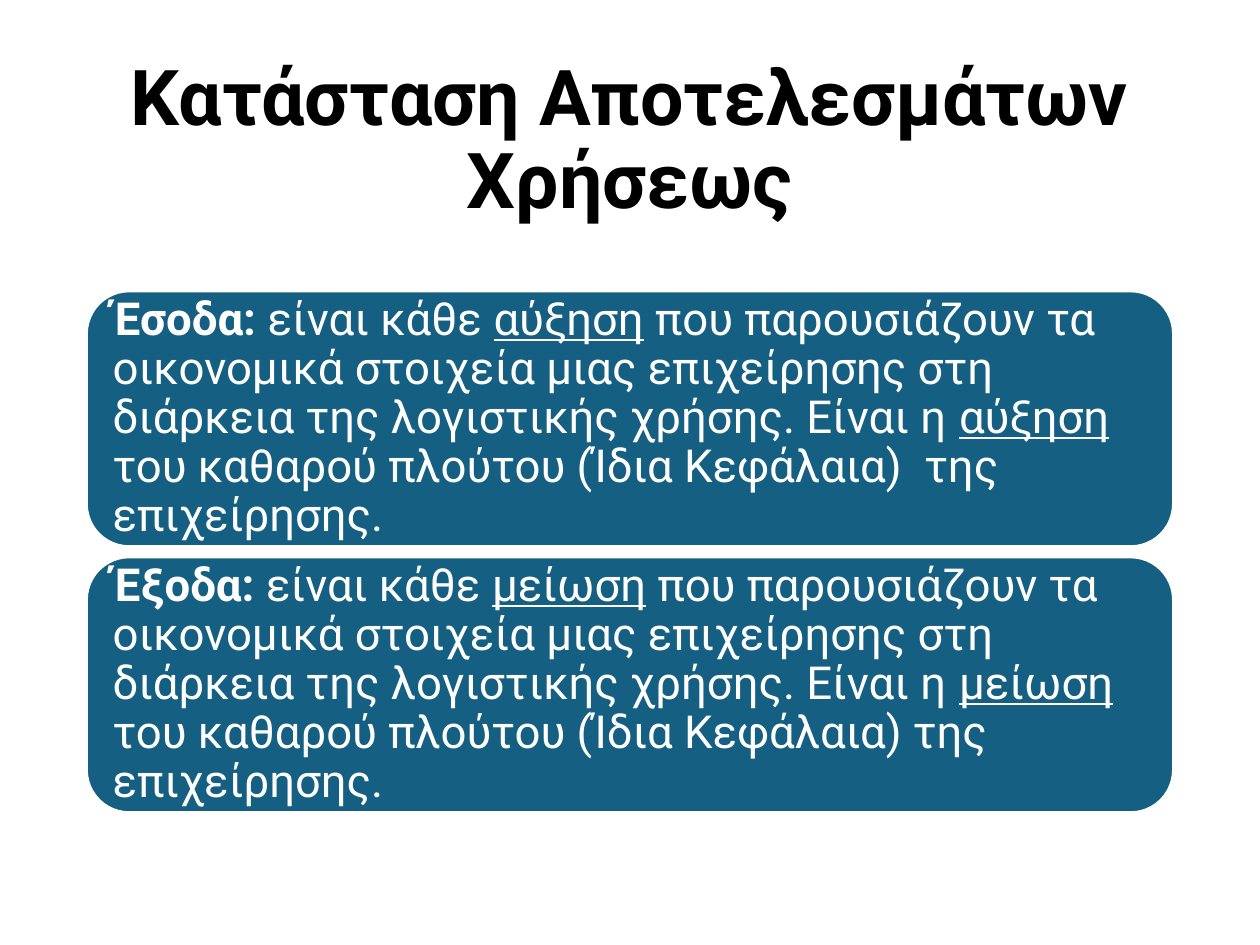
from dataclasses import dataclass

from pptx import Presentation
from pptx.dml.color import RGBColor
from pptx.enum.shapes import MSO_SHAPE as Shape
from pptx.enum.text import MSO_ANCHOR as Anchor, PP_ALIGN as Align
from pptx.slide import Slide
from pptx.text.text import TextFrame
from pptx.util import Pt


@dataclass(frozen=True)
class Theme:
    font: str = "Roboto"
    title_size: float = 44
    body_size: float = 26
    title_color: RGBColor = RGBColor(0x00, 0x00, 0x00)
    body_color: RGBColor = RGBColor(0xFF, 0xFF, 0xFF)
    card_color: RGBColor = RGBColor(0x15, 0x60, 0x82)
    border_color: RGBColor = RGBColor(0xFF, 0xFF, 0xFF)


@dataclass(frozen=True)
class Span:
    text: str
    bold: bool = False
    underline: bool = False


@dataclass(frozen=True)
class Definition:
    term: str
    change: str
    ending: str

    def spans(self) -> list[Span]:
        return [
            Span(f"{self.term}: ", bold=True),
            Span("είναι κάθε "),
            Span(self.change, underline=True),
            Span(" που παρουσιάζουν τα οικονομικά στοιχεία μιας επιχείρησης "
                 "στη διάρκεια της λογιστικής χρήσης. Είναι η "),
            Span(f"{self.change} ", underline=True),
            Span(self.ending),
        ]


THEME = Theme()
LEFT, WIDTH = 49.5, 621
TITLE_TOP, TITLE_HEIGHT = 28.75, 104.4
CARD_TOP, CARD_HEIGHT, CARD_PITCH = 166.3, 146, 152
CARD_INSET = 7.8
DEFINITIONS = [
    Definition("Έσοδα", "αύξηση",
               "του καθαρού πλούτου (Ίδια Κεφάλαια)  της επιχείρησης."),
    Definition("Έξοδα", "μείωση",
               "του καθαρού πλούτου (Ίδια Κεφάλαια) της επιχείρησης."),
]


def set_attributes(target: object, values: dict) -> None:
    for name, value in values.items():
        setattr(target, name, value)


def write_spans(frame: TextFrame, spans: list[Span], size: float,
                color: RGBColor, alignment: Align) -> None:
    """Fill the frame with one wrapped, vertically centred paragraph."""
    set_attributes(frame, {"word_wrap": True, "vertical_anchor": Anchor.MIDDLE})
    paragraph = frame.paragraphs[0]
    set_attributes(paragraph, {"alignment": alignment, "line_spacing": 0.9})
    for span in spans:
        run = paragraph.add_run()
        run.text = span.text
        set_attributes(run.font, {
            "name": THEME.font, "size": Pt(size),
            "bold": span.bold, "underline": span.underline,
        })
        run.font.color.rgb = color


def add_title(slide: Slide, text: str) -> None:
    box = slide.shapes.add_textbox(
        Pt(LEFT), Pt(TITLE_TOP), Pt(WIDTH), Pt(TITLE_HEIGHT))
    write_spans(box.text_frame, [Span(text, bold=True)],
                THEME.title_size, THEME.title_color, Align.CENTER)


def add_card(slide: Slide, top: float, definition: Definition) -> None:
    card = slide.shapes.add_shape(
        Shape.ROUNDED_RECTANGLE, Pt(LEFT), Pt(top), Pt(WIDTH), Pt(CARD_HEIGHT))
    card.shadow.inherit = False
    card.fill.solid()
    card.fill.fore_color.rgb = THEME.card_color
    card.line.color.rgb = THEME.border_color
    card.line.width = Pt(1.5)
    set_attributes(card.text_frame, {
        f"margin_{side}": Pt(CARD_INSET)
        for side in ("left", "top", "right", "bottom")
    })
    write_spans(card.text_frame, definition.spans(),
                THEME.body_size, THEME.body_color, Align.LEFT)


def main() -> None:
    presentation = Presentation()
    set_attributes(presentation,
                   {"slide_width": Pt(720), "slide_height": Pt(540)})
    slide = presentation.slides.add_slide(presentation.slide_layouts[6])
    add_title(slide, "Κατάσταση Αποτελεσμάτων Χρήσεως")
    for index, definition in enumerate(DEFINITIONS):
        add_card(slide, CARD_TOP + index * CARD_PITCH, definition)
    presentation.save("out.pptx")


if __name__ == "__main__":
    main()
